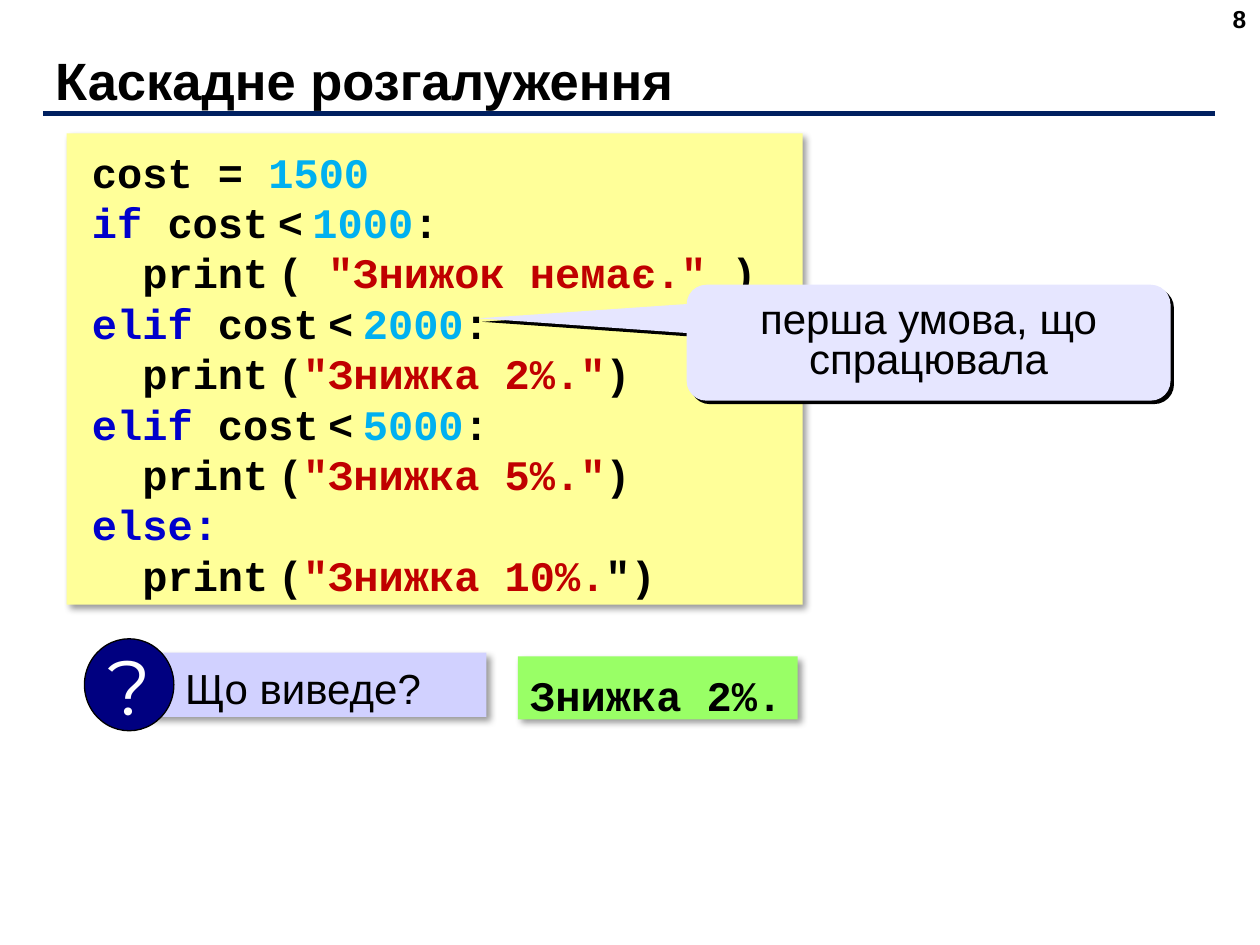
from lxml import etree
from pptx import Presentation
from pptx.dml.color import RGBColor
from pptx.enum.shapes import MSO_CONNECTOR, MSO_SHAPE
from pptx.enum.text import MSO_ANCHOR, PP_ALIGN
from pptx.oxml.ns import qn
from pptx.util import Inches, Pt

TOP, MIDDLE = MSO_ANCHOR.TOP, MSO_ANCHOR.MIDDLE
LEFT, CENTER, RIGHT = PP_ALIGN.LEFT, PP_ALIGN.CENTER, PP_ALIGN.RIGHT

THEME = {
    "sans": "Arial", "mono": "Courier New", "badge_font": "Montserrat",
    "title_size": 30, "body_size": 24, "gap_size": 9, "number_size": 14, "badge_size": 44,
    "text": "000000", "white": "FFFFFF", "rule": "002060",
    "keyword": "0000CC", "number": "00B0F0", "string": "C00000",
    "code_fill": "FFFF99", "question_fill": "D1D1FF", "badge_fill": "000080",
    "callout_fill": "E6E6FF", "answer_fill": "99FF66",
}
SOFT_SHADOW = {"alpha": 40, "blur": 4, "distance": 3}
HARD_SHADOW = {"alpha": 100, "blur": 0, "distance": 2.8}

# Content: each code line is a list of (text, colour role); GAP is a narrow space
TITLE = "Каскадне розгалуження"
SLIDE_NUMBER = "8"
QUESTION = "Що виведе?"
CALLOUT = "перша умова, що спрацювала"
ANSWER = "Знижка 2%."
GAP = (" ", "gap")


def condition(keyword, limit):
    return [(keyword, "keyword"), (" cost", "text"), GAP, ("<", "text"), GAP,
            (limit, "number"), (":", "text")]


def print_call(argument, opening="(", closing=")"):
    return [("  print", "text"), GAP, (opening, "text"),
            (argument, "string"), (closing, "text")]


CODE = [
    [("cost = ", "text"), ("1500", "number")],
    condition("if", "1000"),
    print_call('"Знижок немає." ', opening="( "),
    condition("elif", "2000"),
    print_call('"Знижка 2%."'),
    condition("elif", "5000"),
    print_call('"Знижка 5%."'),
    [("else:", "keyword")],
    print_call('"Знижка 10%.', closing='")'),
]


def color(name):
    return RGBColor.from_string(THEME[name])


def write_text(shape, lines, font="sans", size="body_size", role="text", bold=False,
               align=LEFT, anchor=TOP, spacing=None, wrap=True,
               margins=(0.1, 0.05, 0.1, 0.05)):
    """Fill a shape with lines, each a string or a list of (text, role) pairs."""
    frame = shape.text_frame
    frame.word_wrap = wrap
    frame.vertical_anchor = anchor
    (frame.margin_left, frame.margin_top,
     frame.margin_right, frame.margin_bottom) = map(Inches, margins)
    for index, line in enumerate(lines):
        paragraph = frame.paragraphs[0] if index == 0 else frame.add_paragraph()
        paragraph.alignment = align
        paragraph.line_spacing = spacing
        for text, run_role in [(line, role)] if isinstance(line, str) else line:
            run = paragraph.add_run()
            run.text = text
            is_gap = run_role == "gap"
            run.font.name = THEME[font]
            run.font.size = Pt(THEME["gap_size" if is_gap else size])
            run.font.bold = bold
            run.font.color.rgb = color("text" if is_gap else run_role)


def add_box(slide, kind, place, fill, shadow=None, outline=None):
    shape = slide.shapes.add_shape(kind, *map(Inches, place))
    shape.fill.solid()
    shape.fill.fore_color.rgb = color(fill)
    if outline:
        shape.line.color.rgb = color(outline)
        shape.line.width = Pt(0.75)
    else:
        shape.line.fill.background()
    shape.shadow.inherit = False
    if shadow:
        effects = shape.element.spPr.find(qn("a:effectLst"))
        outer = etree.SubElement(
            effects, qn("a:outerShdw"), blurRad=str(Pt(shadow["blur"])),
            dist=str(Pt(shadow["distance"])), dir="2700000", algn="tl", rotWithShape="0")
        tint = etree.SubElement(outer, qn("a:srgbClr"), val=THEME["text"])
        etree.SubElement(tint, qn("a:alpha"), val=str(shadow["alpha"] * 1000))
    return shape


def add_label(slide, place, text, **text_format):
    write_text(slide.shapes.add_textbox(*map(Inches, place)), [text], **text_format)


def main():
    presentation = Presentation()
    presentation.slide_width, presentation.slide_height = Inches(10), Inches(7.5)
    slide = presentation.slides.add_slide(presentation.slide_layouts[6])

    # Title and slide number
    add_label(slide, (0.34, 0.33, 9.16, 0.52), TITLE, size="title_size", bold=True,
              anchor=MIDDLE, margins=(0.1, 0.08, 0.1, 0))
    add_label(slide, (7.66, -0.02, 2.33, 0.52), SLIDE_NUMBER, size="number_size",
              bold=True, align=RIGHT)

    # Code panel
    code_format = {"font": "mono", "bold": True, "spacing": Pt(28.8)}
    panel = add_box(slide, MSO_SHAPE.RECTANGLE, (0.53, 1.06, 5.84, 3.74),
                    "code_fill", SOFT_SHADOW)
    write_text(panel, CODE, margins=(0.2, 0.1, 0.1, 0), **code_format)

    # Question with its round badge
    question = add_box(slide, MSO_SHAPE.RECTANGLE, (1.18, 5.18, 2.68, 0.51),
                       "question_fill", SOFT_SHADOW)
    write_text(question, [QUESTION], margins=(0.29, 0.08, 0.1, 0))
    badge = add_box(slide, MSO_SHAPE.OVAL, (0.67, 5.07, 0.71, 0.73),
                    "badge_fill", outline="text")
    write_text(badge, ["?"], font="badge_font", size="badge_size", role="white",
               align=CENTER, anchor=MIDDLE, wrap=False)

    # Callout pointing at the condition that holds
    callout = add_box(slide, MSO_SHAPE.ROUNDED_RECTANGULAR_CALLOUT,
                      (5.45, 2.26, 3.84, 0.92), "callout_fill", HARD_SHADOW)
    for index, value in enumerate((-0.93, -0.21, 0.17)):
        callout.adjustments[index] = value
    write_text(callout, [CALLOUT], align=CENTER, anchor=MIDDLE, spacing=0.8)

    # Answer
    answer = add_box(slide, MSO_SHAPE.RECTANGLE, (4.11, 5.21, 2.22, 0.5),
                     "answer_fill", SOFT_SHADOW)
    write_text(answer, [ANSWER], wrap=False, margins=(0.1, 0.1, 0.1, 0), **code_format)

    # Rule under the title
    rule = slide.shapes.add_connector(MSO_CONNECTOR.STRAIGHT, Inches(0.34), Inches(0.9),
                                      Inches(9.64), Inches(0.9))
    rule.line.color.rgb = color("rule")
    rule.line.width = Pt(3)
    etree.SubElement(rule.element.spPr, qn("a:effectLst"))

    presentation.save("out.pptx")


if __name__ == "__main__":
    main()
